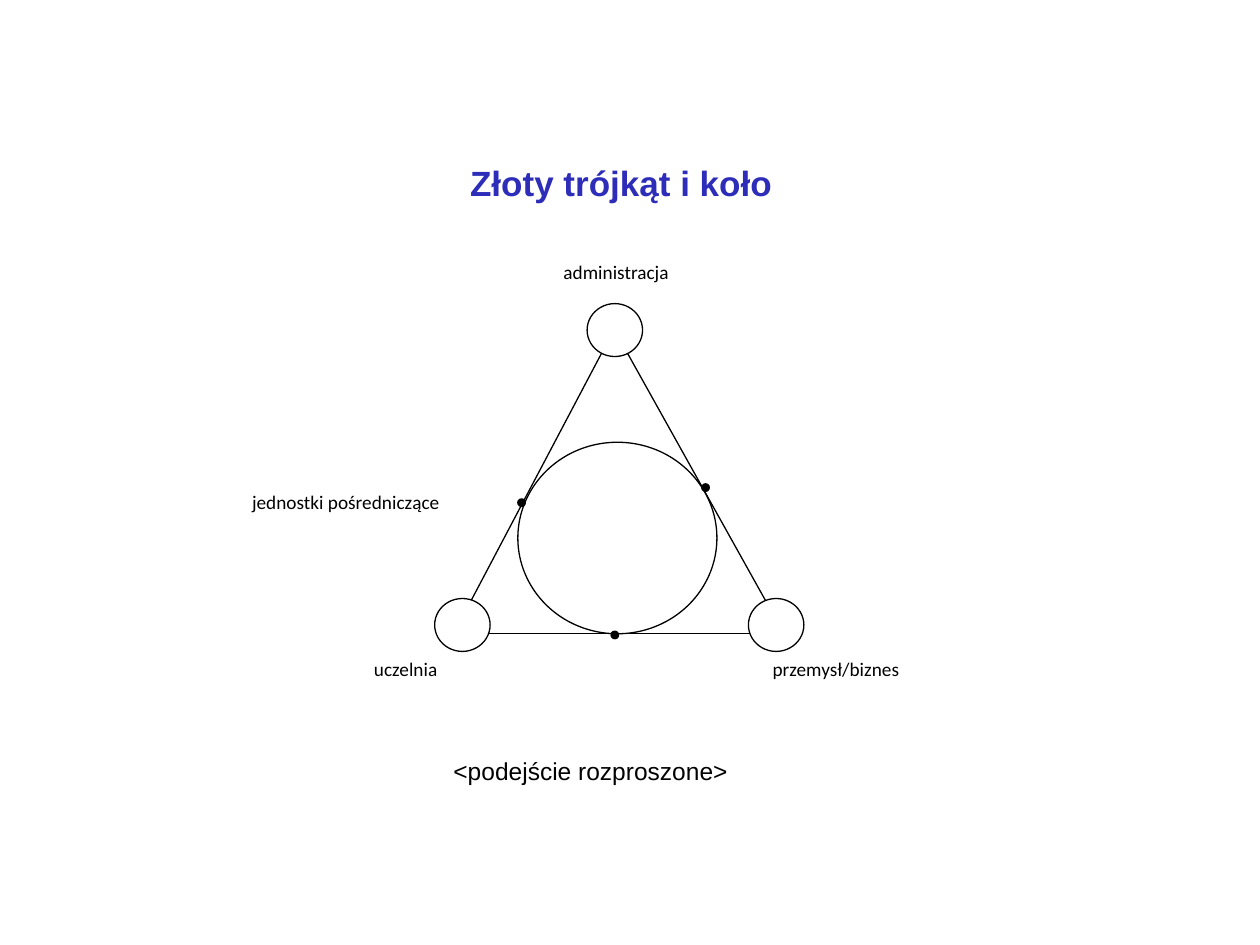
from lxml import etree
from pptx import Presentation
from pptx.dml.color import RGBColor
from pptx.enum import shapes, text
from pptx.oxml import ns
from pptx.util import Inches, Pt

HUES = {"title": "2D2DB9", "ink": "000000", "paper": "FFFFFF"}

deck = Presentation()
deck.slide_width, deck.slide_height = Inches(10), Inches(7.5)
slide = deck.slides.add_slide(deck.slide_layouts[6])


def write(words, box, size, face, hue="ink", align=text.PP_ALIGN.CENTER):
    """Add a one-paragraph text box and return it."""
    note = slide.shapes.add_textbox(*map(Inches, box))
    note.text_frame.word_wrap = True
    para = note.text_frame.paragraphs[0]
    para.text = words
    para.alignment = align
    para.font.size = Pt(size)
    para.font.name = face
    para.font.color.rgb = RGBColor.from_string(HUES[hue])
    return note


def ring(left, top, width, height, hue):
    """Add an outlined ellipse filled with the given colour."""
    oval = slide.shapes.add_shape(
        shapes.MSO_SHAPE.OVAL, *map(Inches, (left, top, width, height)))
    oval.shadow.inherit = False
    oval.fill.solid()
    oval.fill.fore_color.rgb = RGBColor.from_string(HUES[hue])
    oval.line.color.rgb = RGBColor.from_string(HUES["ink"])
    oval.line.width = Pt(0.75)


title = write("Złoty trójkąt i koło", (0.43, 1.23, 9, 0.63), 20, "Arial", "title")
title.text_frame.paragraphs[0].font.bold = True

# Triangle sides, then the circles that cover their ends
sides = [(4.85, 2.66, 3.69, 4.86), (4.9, 2.66, 6.1, 4.81), (6.3, 5.03, 3.74, 5.03)]
for ends in sides:
    side = slide.shapes.add_connector(
        shapes.MSO_CONNECTOR.STRAIGHT, *map(Inches, ends))
    side.line.color.rgb = RGBColor.from_string(HUES["ink"])
    side.line.width = Pt(0.75)
    etree.SubElement(side.element.spPr, ns.qn("a:effectLst"))

ring(4.11, 3.51, 1.58, 1.52, "paper")
for left, top in [(4.66, 2.41), (5.94, 4.75), (3.45, 4.75)]:
    ring(left, top, 0.44, 0.42, "paper")
for left, top in [(4.11, 3.96), (4.85, 5.01), (5.57, 3.84)]:
    ring(left, top, 0.06, 0.06, "ink")

labels = [
    ("administracja", 3.69, 2.02, 2.4),
    ("jednostki pośredniczące", 1.38, 3.84, 2.73),
    ("uczelnia", 2.62, 5.17, 1.2),
    ("przemysł/biznes", 5.4, 5.17, 2.47),
]
for words, left, top, width in labels:
    label = write(words, (left, top, width, 0.5), 11, "Calibri")
    label.text_frame.paragraphs[0].space_after = Pt(10)

foot = write("<podejście rozproszone>", (3.5, 5.95, 2.39, 0.34), 14, "Arial",
             align=text.PP_ALIGN.LEFT)
foot.text_frame.word_wrap = False
foot.text_frame.auto_size = text.MSO_AUTO_SIZE.SHAPE_TO_FIT_TEXT

deck.save("out.pptx")
